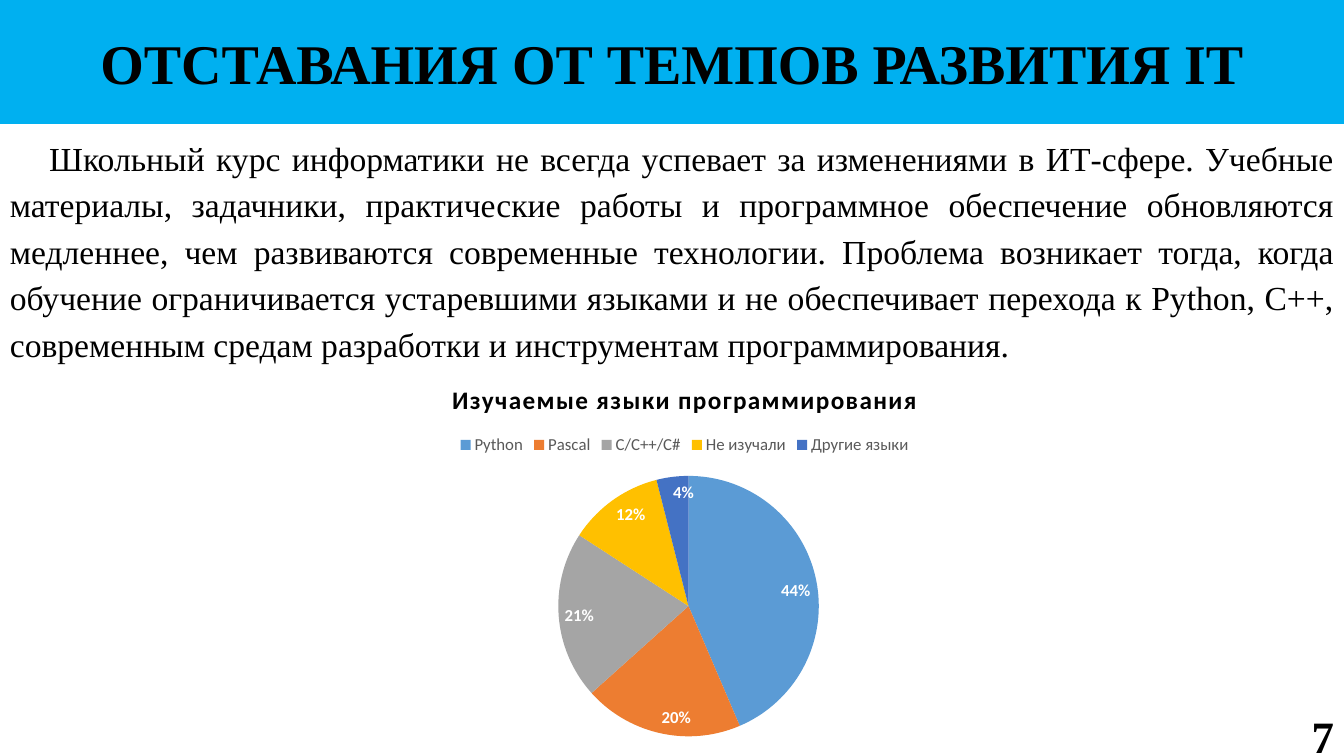
from lxml import etree
from pptx import Presentation
from pptx.chart.data import CategoryChartData
from pptx.dml.color import RGBColor
from pptx.enum.chart import XL_CHART_TYPE, XL_LABEL_POSITION, XL_LEGEND_POSITION
from pptx.enum.shapes import MSO_SHAPE
from pptx.enum.text import MSO_ANCHOR, PP_ALIGN
from pptx.oxml import parse_xml
from pptx.oxml.ns import nsdecls, qn
from pptx.util import Inches, Pt

HEADING = "ОТСТАВАНИЯ ОТ ТЕМПОВ РАЗВИТИЯ IT"
BODY = (
    "Школьный курс информатики не всегда успевает за изменениями в ИТ-сфере. "
    "Учебные материалы, задачники, практические работы и программное обеспечение "
    "обновляются медленнее, чем развиваются современные технологии. Проблема "
    "возникает тогда, когда обучение ограничивается устаревшими языками и не "
    "обеспечивает перехода к Python, C++, современным средам разработки и "
    "инструментам программирования."
)
PAGE = "7"
CHART_TITLE = "Изучаемые языки программирования"
LANGUAGES = [
    ("Python", 44, "python"),
    ("Pascal", 20, "pascal"),
    ("C/C++/C#", 21, "c"),
    ("Не изучали", 12, "none"),
    ("Другие языки", 4, "other"),
]
COLORS = {
    "band": "00B0F0", "text": "000000", "legend": "595959", "label": "FFFFFF",
    "python": "5B9BD5", "pascal": "ED7D31", "c": "A5A5A5",
    "none": "FFC000", "other": "4472C4",
}
PIE_LAYOUT = {"x": 0.34, "y": 0.29, "w": 0.33, "h": 0.68}
WIDTH, HEIGHT = 13.33, 7.5


def color(name):
    return RGBColor.from_string(COLORS[name])


def style(font, size, color_name, bold=False, family="Calibri"):
    font.name = family
    font.size = Pt(size)
    font.bold = bold
    font.color.rgb = color(color_name)


def write(shape, text, size, align, anchor, bold=False):
    frame = shape.text_frame
    frame.word_wrap = True
    frame.vertical_anchor = anchor
    frame.text = text
    paragraph = frame.paragraphs[0]
    paragraph.alignment = align
    style(paragraph.runs[0].font, size, "text", bold, "Times New Roman")
    return paragraph


def add_languages_chart(slide):
    data = CategoryChartData()
    data.categories = [name for name, _, _ in LANGUAGES]
    data.add_series("Series 1", [share for _, share, _ in LANGUAGES])
    chart = slide.shapes.add_chart(
        XL_CHART_TYPE.PIE, Inches(2.85), Inches(3.62), Inches(7.88), Inches(3.8), data
    ).chart
    style(chart.font, 10, "text")

    chart.has_title = True
    title = chart.chart_title
    title.include_in_layout = False
    title.text_frame.text = CHART_TITLE
    title_font = title.text_frame.paragraphs[0].runs[0].font
    style(title_font, 18, "text", True)
    title_font._element.set("spc", "100")

    chart.has_legend = True
    chart.legend.position = XL_LEGEND_POSITION.TOP
    chart.legend.include_in_layout = False
    style(chart.legend.font, 12, "legend")

    pie = chart.plots[0]
    pie.vary_by_categories = True
    for index, (_, _, color_name) in enumerate(LANGUAGES):
        fill = pie.series[0].points[index].format.fill
        fill.solid()
        fill.fore_color.rgb = color(color_name)

    labels = pie.series[0].data_labels
    labels.show_percentage = True
    labels.show_value = False
    labels.number_format = "0%"
    labels.number_format_is_linked = False
    labels.position = XL_LABEL_POSITION.INSIDE_END
    style(labels.font, 12, "label", True)

    plot_area = chart._chartSpace.chart.plotArea
    for layout in plot_area.findall(qn("c:layout")):
        plot_area.remove(layout)
    layout = parse_xml(f"<c:layout {nsdecls('c')}><c:manualLayout/></c:layout>")
    settings = {"layoutTarget": "inner", "xMode": "edge", "yMode": "edge", **PIE_LAYOUT}
    for tag, value in settings.items():
        etree.SubElement(layout[0], qn(f"c:{tag}")).set("val", str(value))
    plot_area.insert(0, layout)


def main():
    deck = Presentation()
    deck.slide_width, deck.slide_height = Inches(WIDTH), Inches(HEIGHT)
    slide = deck.slides.add_slide(deck.slide_layouts[6])

    body = slide.shapes.add_textbox(0, Inches(1.26), Inches(WIDTH), Inches(2.42))
    paragraph = write(body, BODY, 24, PP_ALIGN.JUSTIFY, MSO_ANCHOR.TOP)
    paragraph.line_spacing = 1.15
    paragraph._p.get_or_add_pPr().set("indent", str(Inches(0.39)))

    page = slide.shapes.add_textbox(
        Inches(WIDTH - 3), Inches(HEIGHT - 0.4), Inches(3), Inches(0.4)
    )
    write(page, PAGE, 32, PP_ALIGN.RIGHT, MSO_ANCHOR.MIDDLE, True)

    band = slide.shapes.add_shape(
        MSO_SHAPE.RECTANGLE, 0, 0, Inches(WIDTH), Inches(1.23)
    )
    band.shadow.inherit = False
    band.fill.solid()
    band.fill.fore_color.rgb = color("band")
    band.line.fill.background()
    write(band, HEADING, 40, PP_ALIGN.CENTER, MSO_ANCHOR.MIDDLE, True)

    add_languages_chart(slide)
    deck.save("out.pptx")


if __name__ == "__main__":
    main()
